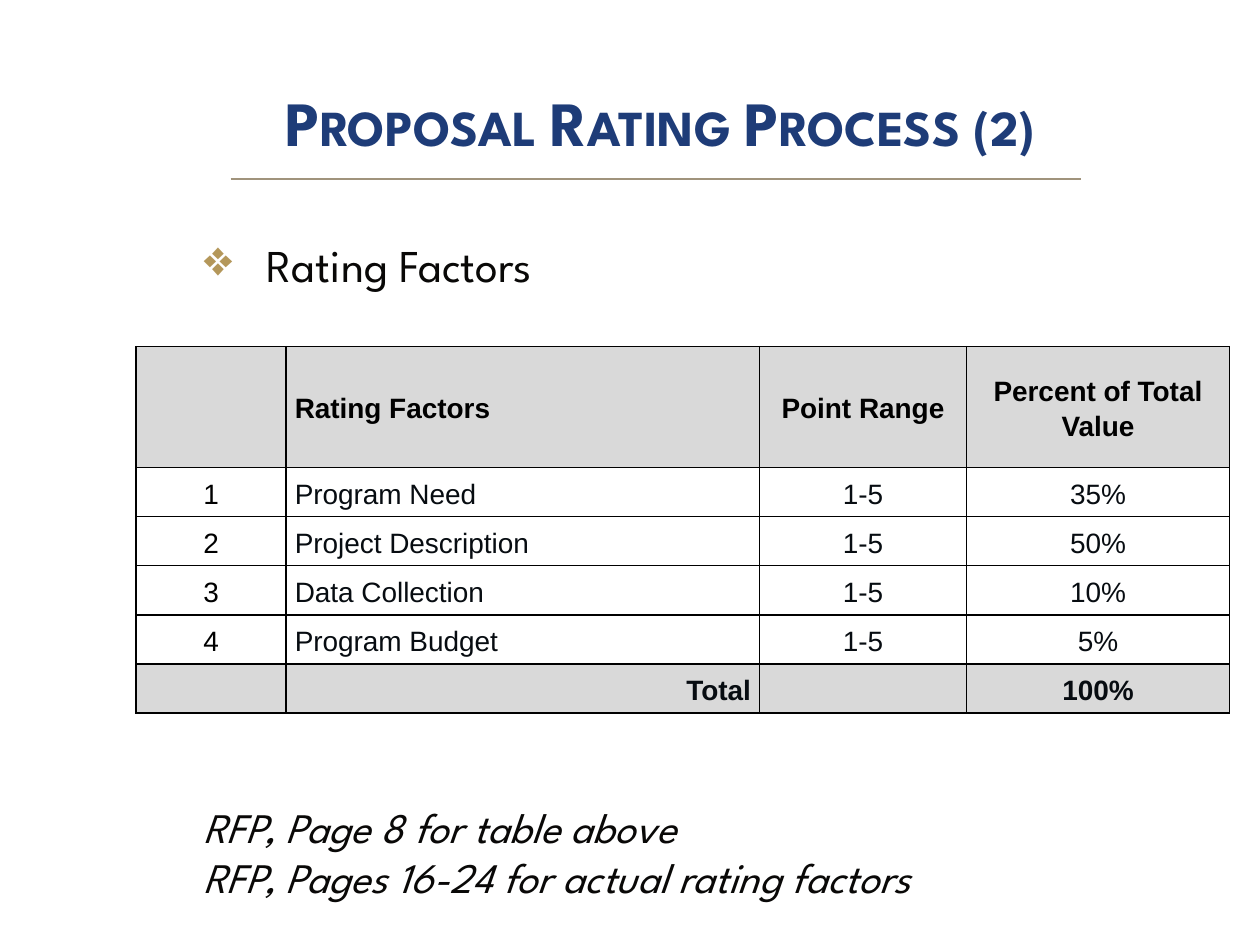
from lxml.etree import SubElement
from pptx import Presentation
from pptx.dml.color import RGBColor
from pptx.enum.shapes import MSO_CONNECTOR
from pptx.enum.text import MSO_ANCHOR, PP_ALIGN
from pptx.oxml.ns import qn
from pptx.util import Inches, Pt

LEFT, CENTER, RIGHT = PP_ALIGN.LEFT, PP_ALIGN.CENTER, PP_ALIGN.RIGHT


def color(value):
    """Turn a hex string into a colour."""
    return RGBColor.from_string(value)


class RatingSlide:
    """Hold the style and the current slide, and add elements to it."""

    heading_font = "League Spartan"
    table_font = "Arial"
    navy, gold, rule = "1E3C78", "B4975A", "A0937C"
    ink, black, cell_ink, shade = "090807", "000000", "070C11", "D9D9D9"

    def __init__(self, presentation):
        """Add a blank slide."""
        self.slide = presentation.slides.add_slide(presentation.slide_layouts[6])

    def style(self, paragraph, name, size, ink, bold=False, italic=False):
        """Set the font of a paragraph."""
        font = paragraph.font
        font.name, font.size, font.bold, font.italic = name, Pt(size), bold, italic
        font.color.rgb = color(ink)

    def text_frame(self, left, top, width, height):
        """Add a wrapping text box and return its frame."""
        shape = self.slide.shapes.add_textbox(
            Inches(left), Inches(top), Inches(width), Inches(height))
        shape.text_frame.word_wrap = True
        return shape.text_frame

    def title(self, text, *box):
        """Add a centred title in small capitals."""
        frame = self.text_frame(*box)
        frame.vertical_anchor = MSO_ANCHOR.MIDDLE
        frame.margin_top = frame.margin_bottom = 0
        paragraph = frame.paragraphs[0]
        paragraph.text, paragraph.alignment = text, CENTER
        self.style(paragraph, self.heading_font, 36, self.navy, bold=True)
        properties = paragraph._p.get_or_add_pPr()
        properties.set("marL", str(Inches(0.44)))
        properties.find(qn("a:defRPr")).set("cap", "small")

    def bullet(self, text, *box):
        """Add a line of text with a gold diamond bullet."""
        paragraph = self.text_frame(*box).paragraphs[0]
        paragraph.text = text
        properties = paragraph._p.get_or_add_pPr()
        properties.set("marL", str(Inches(0.5)))
        properties.set("indent", str(Inches(-0.5)))
        bullet_color = SubElement(properties, qn("a:buClr"))
        SubElement(bullet_color, qn("a:srgbClr"), val=self.gold)
        SubElement(properties, qn("a:buSzPct"), val="110000")
        SubElement(properties, qn("a:buChar"), char="❖")
        self.style(paragraph, self.heading_font, 26, self.ink)

    def notes(self, lines, *box):
        """Add italic lines of text."""
        frame = self.text_frame(*box)
        frame.text = "\n".join(lines)
        for paragraph in frame.paragraphs:
            self.style(paragraph, self.heading_font, 24, self.ink, italic=True)

    def line(self, left, right, top):
        """Add a thin horizontal line."""
        connector = self.slide.shapes.add_connector(
            MSO_CONNECTOR.STRAIGHT, Inches(left), Inches(top), Inches(right), Inches(top))
        connector.line.color.rgb = color(self.rule)
        connector.line.width = Pt(0.75)
        SubElement(connector._element.spPr, qn("a:effectLst"))

    def border(self, cell):
        """Draw a black border around a cell."""
        properties = cell._tc.get_or_add_tcPr()
        for side in ("a:lnL", "a:lnR", "a:lnT", "a:lnB"):
            edge = SubElement(properties, qn(side), w=str(Pt(1)))
            fill = SubElement(edge, qn("a:solidFill"))
            SubElement(fill, qn("a:srgbClr"), val=self.black)

    def cell(self, cell, text, alignment, ink, shaded):
        """Fill in one table cell."""
        self.border(cell)
        if shaded:
            cell.fill.solid()
            cell.fill.fore_color.rgb = color(self.shade)
        else:
            cell.fill.background()
        cell.margin_left = cell.margin_right = Inches(0.07)
        cell.margin_top = cell.margin_bottom = 0
        cell.vertical_anchor = MSO_ANCHOR.MIDDLE
        paragraph = cell.text_frame.paragraphs[0]
        paragraph.text, paragraph.alignment = text, alignment
        paragraph.line_spacing = 1.15
        self.style(paragraph, self.table_font, 16, ink, bold=shaded)

    def table(self, rows, left, top, widths, heights):
        """Add a table with a shaded first and last row."""
        table = self.slide.shapes.add_table(
            len(rows), len(widths), Inches(left), Inches(top),
            Inches(sum(widths)), Inches(sum(heights))).table
        table.first_row = table.horz_banding = False
        for column, width in zip(table.columns, widths):
            column.width = Inches(width)
        last = len(rows) - 1
        for r, values in enumerate(rows):
            table.rows[r].height = Inches(heights[r])
            for c, text in enumerate(values):
                alignment = CENTER if c != 1 else RIGHT if r == last else LEFT
                ink = self.black if r == 0 or c == 0 else self.cell_ink
                self.cell(table.cell(r, c), text, alignment, ink, r in (0, last))


def main():
    """Build the slide and save it."""
    presentation = Presentation()
    presentation.slide_width, presentation.slide_height = Inches(10), Inches(7.5)
    slide = RatingSlide(presentation)
    slide.bullet("Rating Factors", 1.52, 1.83, 8, 0.6)
    slide.notes(["RFP, Page 8 for table above",
                 "RFP, Pages 16-24 for actual rating factors"], 1.52, 6.31, 8, 0.87)
    slide.title("Proposal Rating Process (2)", 0.52, 0.5, 9, 0.92)
    slide.line(1.83, 8.58, 1.42)
    factors = [("Program Need", "35%"), ("Project Description", "50%"),
               ("Data Collection", "10%"), ("Program Budget", "5%")]
    rows = [("", "Rating Factors", "Point Range", "Percent of Total Value")]
    rows += [(str(number), factor, "1-5", percent)
             for number, (factor, percent) in enumerate(factors, 1)]
    rows.append(("", "Total", "", "100%"))
    slide.table(rows, 1.08, 2.75, [1.19, 3.76, 1.64, 2.09], [0.96] + [0.39] * 5)
    presentation.save("out.pptx")


if __name__ == "__main__":
    main()
